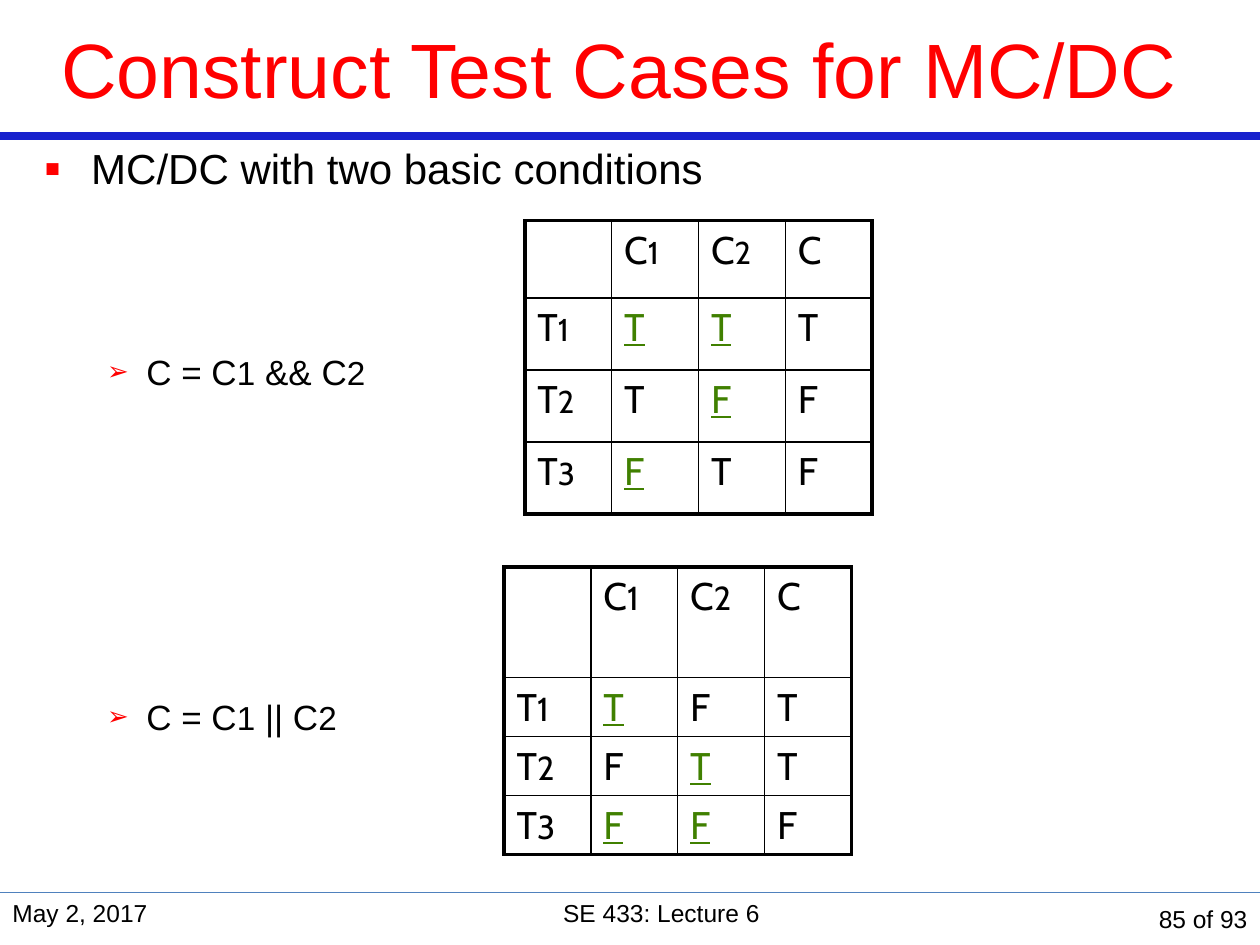
from dataclasses import dataclass

from lxml import etree
from pptx import Presentation
from pptx.dml.color import RGBColor as RGB
from pptx.enum.shapes import MSO_CONNECTOR as Connector
from pptx.enum.text import MSO_ANCHOR as Anchor, PP_ALIGN as Align
from pptx.oxml.ns import qn
from pptx.util import Cm, Pt


@dataclass(frozen=True)
class Theme:
    font: str = "Arial"
    table_font: str = "Cabin"
    red: str = "FF0000"
    black: str = "000000"
    green: str = "408000"
    rule: str = "1822CD"
    footer_rule: str = "4F81BD"
    title: int = 44
    body: int = 24
    sub: int = 20
    sub_digit: int = 19
    cell: int = 22
    footer: int = 14
    thin: float = 1
    thick: float = 2.25


THEME = Theme()

AND_ROWS = [
    ["", "C1", "C2", "C"],
    ["T1", "*T", "*T", "T"],
    ["T2", "T", "*F", "F"],
    ["T3", "*F", "T", "F"],
]
OR_ROWS = [
    ["", "C1", "C2", "C"],
    ["T1", "*T", "F", "T"],
    ["T2", "F", "*T", "T"],
    ["T3", "*F", "*F", "F"],
]


def style(r, size, color=THEME.black, font=THEME.font):
    r.font.size = Pt(size)
    r.font.name = font
    r.font.color.rgb = RGB.from_string(color)


def add_runs(p, text, size, digit_size, color=THEME.black, font=THEME.font):
    start = 0
    for i in range(1, len(text) + 1):
        if i == len(text) or text[i].isdigit() != text[start].isdigit():
            r = p.add_run()
            r.text = text[start:i]
            style(r, digit_size if r.text.isdigit() else size, color, font)
            start = i


def add_rule(s, y, color, width):
    line = s.shapes.add_connector(Connector.STRAIGHT, 0, Cm(y), Cm(25.4), Cm(y))
    line.line.color.rgb = RGB.from_string(color)
    line.line.width = Pt(width)
    etree.SubElement(line._element.spPr, qn("a:effectLst"))


def add_box(s, x, y, w, h, anchor=Anchor.TOP):
    tf = s.shapes.add_textbox(Cm(x), Cm(y), Cm(w), Cm(h)).text_frame
    tf.word_wrap = True
    tf.vertical_anchor = anchor
    return tf


def add_label(s, text, box, size, color, align, anchor):
    tf = add_box(s, *box, anchor)
    tf.text = text
    p = tf.paragraphs[0]
    p.alignment = align
    style(p.runs[0], size, color)


def set_bullet(p, char, percent, left, hanging):
    pPr = p._p.get_or_add_pPr()
    pPr.set("marL", str(Cm(left)))
    pPr.set("indent", str(-Cm(hanging)))
    color = etree.SubElement(pPr, qn("a:buClr"))
    etree.SubElement(color, qn("a:srgbClr"), val=THEME.red)
    etree.SubElement(pPr, qn("a:buSzPct"), val=str(percent * 1000))
    etree.SubElement(pPr, qn("a:buFont"), typeface=THEME.font)
    etree.SubElement(pPr, qn("a:buChar"), char=char)


def add_body(s):
    tf = add_box(s, 0.64, 2.75, 24.13, 15.2)
    top = ("▪", 114, 0.95, 0.95)
    sub = ("➢", 74, 2.06, 0.79)
    items = [
        ("MC/DC with two basic conditions", top, THEME.body, 3),
        ("C = C1 && C2", sub, THEME.sub, 90),
        ("C = C1 || C2", sub, THEME.sub, 173),
    ]
    for i, (text, bullet, size, before) in enumerate(items):
        p = tf.add_paragraph() if i else tf.paragraphs[0]
        p.space_before = Pt(before)
        set_bullet(p, *bullet)
        add_runs(p, text, size, THEME.sub_digit)


def set_borders(cell, thick_sides):
    tcPr = cell._tc.get_or_add_tcPr()
    for i, side in enumerate("LRTB"):
        width = THEME.thick if side in thick_sides else THEME.thin
        ln = etree.Element(qn(f"a:ln{side}"), w=str(Pt(width)))
        fill = etree.SubElement(ln, qn("a:solidFill"))
        etree.SubElement(fill, qn("a:srgbClr"), val=THEME.black)
        tcPr.insert(i, ln)


def fill_cell(cell, text, digit_size):
    cell.fill.background()
    p = cell.text_frame.paragraphs[0]
    p.space_before = Pt(6)
    marked = text.startswith("*")
    color = THEME.green if marked else THEME.black
    add_runs(p, text.lstrip("*"), THEME.cell, digit_size, color, THEME.table_font)
    for r in p.runs:
        r.font.underline = marked


def add_truth_table(s, x, y, rows, head_h, row_h, digit_size):
    n_rows, n_cols = len(rows), len(rows[0])
    heights = [head_h] + [row_h] * (n_rows - 1)
    col_w = 1.75
    table = s.shapes.add_table(
        n_rows, n_cols, Cm(x), Cm(y), Cm(col_w * n_cols), Cm(sum(heights))
    ).table
    table.first_row = table.horz_banding = False
    for col in table.columns:
        col.width = Cm(col_w)
    for i, (values, height) in enumerate(zip(rows, heights)):
        table.rows[i].height = Cm(height)
        for j, text in enumerate(values):
            cell = table.cell(i, j)
            fill_cell(cell, text, digit_size)
            edges = {"L": j == 0, "R": j == n_cols - 1, "T": i == 0, "B": i == n_rows - 1}
            set_borders(cell, [side for side, outer in edges.items() if outer])


def add_footer(s):
    y, h = 17.98, 1.07
    for text, x, w, align, anchor in [
        ("May 2, 2017", 0, 5.5, Align.LEFT, Anchor.TOP),
        ("SE 433: Lecture 6", 5.5, 15.67, Align.CENTER, Anchor.TOP),
        ("85 of 93", 21.17, 4.23, Align.RIGHT, Anchor.MIDDLE),
    ]:
        add_label(s, text, (x, y, w, h), THEME.footer, THEME.black, align, anchor)


def main():
    prs = Presentation()
    prs.slide_width, prs.slide_height = Cm(25.4), Cm(19.05)
    s = prs.slides.add_slide(prs.slide_layouts[6])
    add_rule(s, 2.75, THEME.rule, 4.5)
    add_rule(s, 17.99, THEME.footer_rule, 0.75)
    add_label(s, "Construct Test Cases for MC/DC ", (0, 0, 25.4, 2.75),
              THEME.title, THEME.red, Align.CENTER, Anchor.MIDDLE)
    add_body(s)
    add_truth_table(s, 10.58, 4.45, AND_ROWS, 1.56, 1.45, 18)
    add_truth_table(s, 10.16, 11.43, OR_ROWS, 2.23, 1.19, 19)
    add_footer(s)
    prs.save("out.pptx")


if __name__ == "__main__":
    main()
